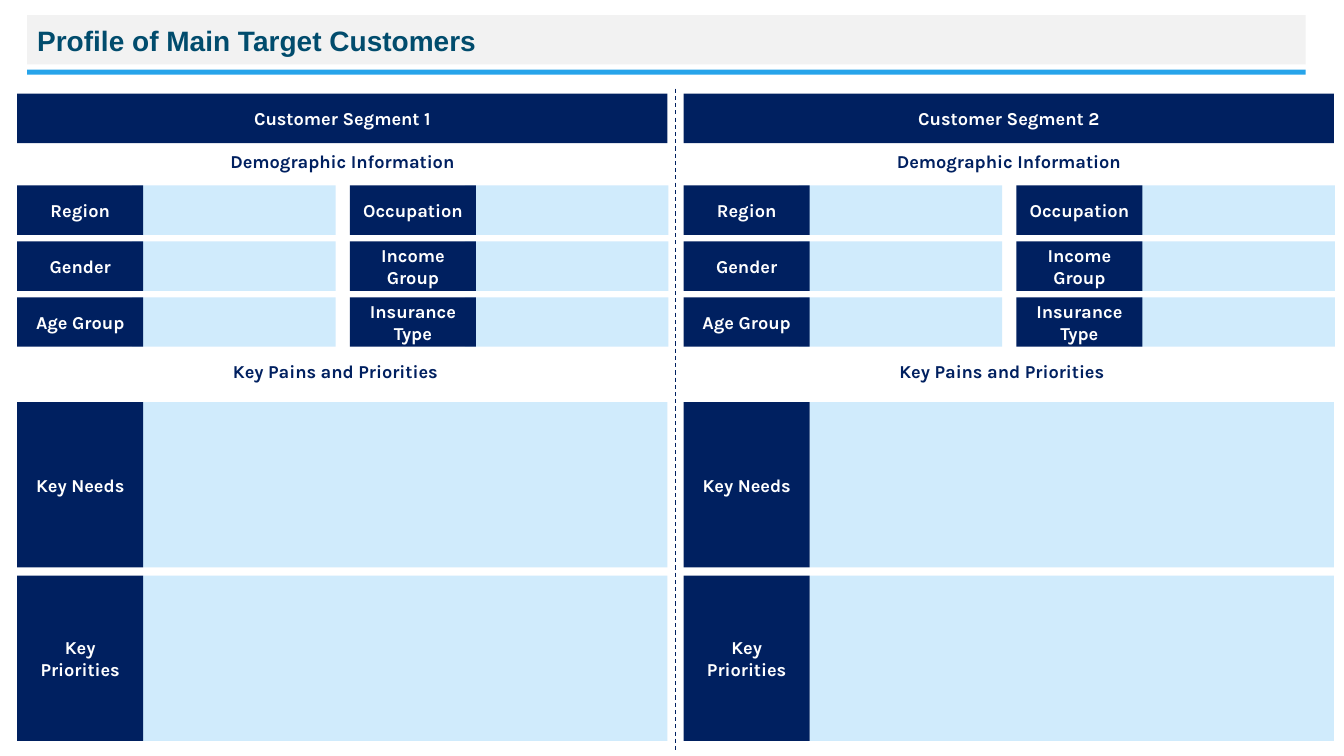
from pptx import Presentation
from pptx import util as u
from pptx.dml.color import RGBColor
from pptx.enum import dml, shapes, text
from pptx.oxml.ns import qn
from lxml import etree

NAVY, PALE, WHITE = "002060", "D0EBFC", "FFFFFF"
SEGMENT_WIDTH, SEGMENT_PITCH = 6.45, 6.61
LABEL_WIDTH, ROW_HEIGHT = 1.25, 0.49
DEMOGRAPHICS = [["Region", "Gender", "Age Group"],
                ["Occupation", "Income Group", "Insurance Type"]]
PRIORITIES = ["Key Needs", "Key Priorities"]


def colour(value):
    return RGBColor.from_string(value)


def add_bar(parent, left, top, width, height, fill):
    bar = parent.add_shape(shapes.MSO_SHAPE.RECTANGLE, u.Inches(left), u.Inches(top),
                           u.Inches(width), u.Inches(height))
    bar.shadow.inherit = False
    bar.fill.solid()
    bar.fill.fore_color.rgb = colour(fill)
    bar.line.fill.background()
    return bar


def write(box, words, ink=WHITE, size=13, font="Karla", align=text.PP_ALIGN.CENTER):
    frame = box.text_frame
    frame.word_wrap = True
    frame.vertical_anchor = text.MSO_ANCHOR.MIDDLE
    para = frame.paragraphs[0]
    para.text = words
    para.alignment = align
    para.font.name = font
    para.font.size = u.Pt(size)
    para.font.bold = True
    para.font.color.rgb = colour(ink)


def add_heading(page, words, left, top):
    box = page.shapes.add_textbox(u.Inches(left), u.Inches(top),
                                  u.Inches(SEGMENT_WIDTH), u.Inches(ROW_HEIGHT))
    write(box, words, NAVY)


def add_entry(page, words, left, top, width, height, overlap=0):
    """Group a pale field with its label, which covers the field by overlap."""
    group = page.shapes.add_group_shape().shapes
    start = LABEL_WIDTH - overlap
    add_bar(group, left + start, top, width - start, height, PALE)
    write(add_bar(group, left, top, LABEL_WIDTH, height, NAVY), words)


def add_title(page, words):
    band = add_bar(page.shapes, 0.27, 0.15, 12.68, 0.49, "F2F2F2")
    write(band, words, "014C6D", 20, "Arial", text.PP_ALIGN.LEFT)
    add_bar(page.shapes, 0.27, 0.69, 12.68, 0.05, "27A4EA")


def add_divider(page):
    divider = page.shapes.add_connector(shapes.MSO_CONNECTOR.STRAIGHT, u.Inches(6.7),
                                        u.Inches(0.88), u.Inches(6.7), u.Inches(7.44))
    divider.line.color.rgb = colour(NAVY)
    divider.line.width = u.Pt(0.75)
    divider.line.dash_style = dml.MSO_LINE.DASH
    etree.SubElement(divider._element.spPr, qn("a:effectLst"))


def add_segment(page, name, left):
    write(add_bar(page.shapes, left, 0.93, SEGMENT_WIDTH, ROW_HEIGHT, NAVY), name)
    add_heading(page, "Demographic Information", left, 1.35)
    for column, labels in enumerate(DEMOGRAPHICS):
        for row, label in enumerate(labels):
            add_entry(page, label, left + column * 3.3, 1.84 + row * 0.555,
                      3.16, ROW_HEIGHT, overlap=0.11)
    add_heading(page, "Key Pains and Priorities", left - 0.07, 3.44)
    for row, label in enumerate(PRIORITIES):
        add_entry(page, label, left, 3.99 + row * 1.72, SEGMENT_WIDTH, 1.64)


def main():
    deck = Presentation()
    deck.slide_width, deck.slide_height = u.Inches(13.33), u.Inches(7.5)
    page = deck.slides.add_slide(deck.slide_layouts[6])
    add_title(page, "Profile of Main Target Customers")
    for index in range(2):
        add_segment(page, f"Customer Segment {index + 1}", 0.17 + index * SEGMENT_PITCH)
    add_divider(page)
    deck.save("out.pptx")


if __name__ == "__main__":
    main()
